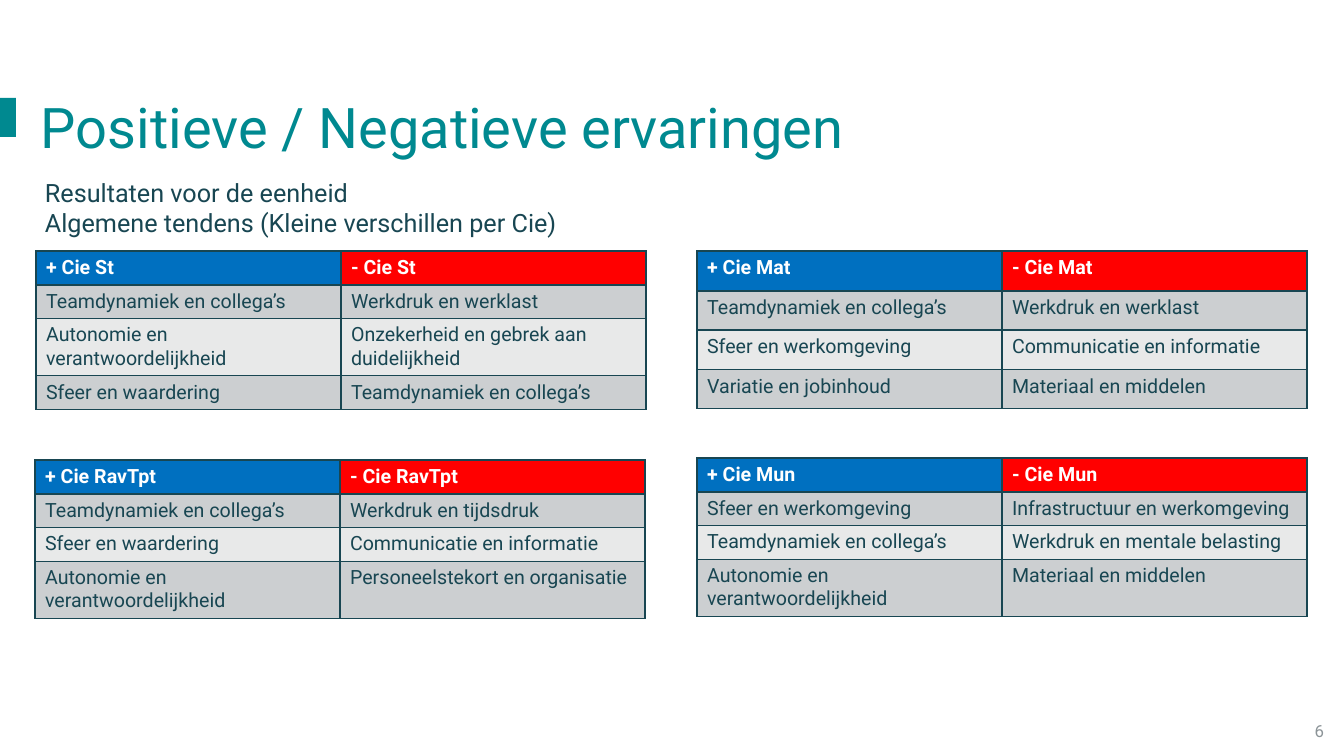
from lxml.etree import SubElement
from pptx import Presentation
from pptx.dml.color import RGBColor
from pptx.enum.shapes import MSO_SHAPE
from pptx.enum.text import MSO_ANCHOR, PP_ALIGN
from pptx.oxml import parse_xml
from pptx.oxml.ns import nsdecls
from pptx.util import Emu, Pt

COLORS = {
    "teal": "008990", "ink": "184652", "gray": "8C9498", "white": "FFFFFF",
    "plus": "0070C0", "minus": "FF0000", "band": "CCCFD1", "light": "E8E9E9",
}
FONT = "Roboto"


def px(n):
    return Emu(round(n * 914400 / 100.8))


def rgb(name):
    return RGBColor.from_string(COLORS[name])


class SlideBuilder:
    def __init__(self, prs):
        self.s = prs.slides.add_slide(prs.slide_layouts[6])

    def add_run(self, p, text, size, color, bold=False):
        r = p.add_run()
        r.text = text
        for name, value in {"name": FONT, "size": Pt(size), "bold": bold}.items():
            setattr(r.font, name, value)
        r.font.color.rgb = rgb(color)

    def bar(self, x, y, w, h, color):
        sp = self.s.shapes.add_shape(MSO_SHAPE.RECTANGLE, px(x), px(y), px(w), px(h))
        sp.shadow.inherit = False
        sp.fill.solid()
        sp.fill.fore_color.rgb = rgb(color)
        sp.line.fill.background()

    def text(self, x, y, w, h, lines, size, color, top=5,
             anchor=MSO_ANCHOR.TOP, align=PP_ALIGN.LEFT):
        tf = self.s.shapes.add_textbox(px(x), px(y), px(w), px(h)).text_frame
        frame = {"word_wrap": True, "margin_top": px(top), "vertical_anchor": anchor}
        for name, value in frame.items():
            setattr(tf, name, value)
        for i, line in enumerate(lines):
            p = tf.add_paragraph() if i else tf.paragraphs[0]
            p.alignment = align
            self.add_run(p, line, size, color)

    def border(self, cell, color):
        tc_pr = cell._tc.get_or_add_tcPr()
        for i, side in enumerate("LRTB"):
            ln = parse_xml(f'<a:ln{side} {nsdecls("a")} w="12700"><a:solidFill/></a:ln{side}>')
            SubElement(ln[0], ln[0].tag.replace("solidFill", "srgbClr"), val=COLORS[color])
            tc_pr.insert(i, ln)

    def table(self, x, y, col_w, heights, company, rows):
        rows = [(f"+ {company}", f"- {company}"), *rows]
        frame = self.s.shapes.add_table(len(rows), 2, px(x), px(y),
                                        px(2 * col_w), px(sum(heights)))
        table = frame.table
        for col in table.columns:
            col.width = px(col_w)
        for i, (row, height) in enumerate(zip(rows, heights)):
            table.rows[i].height = px(height)
            band = "band" if i % 2 else "light"
            fills = (band, band) if i else ("plus", "minus")
            for j, (text, fill) in enumerate(zip(row, fills)):
                cell = table.cell(i, j)
                cell.fill.solid()
                cell.fill.fore_color.rgb = rgb(fill)
                self.border(cell, "ink")
                self.add_run(cell.text_frame.paragraphs[0], text, 14,
                             "ink" if i else "white", bold=i == 0)


# Experiences per company: left, top, row heights, name, (positive, negative)
TEAM = "Teamdynamiek en collega’s"
AUTONOMY = "Autonomie en verantwoordelijkheid"
WORKLOAD = "Werkdruk en werklast"
SETTING = "Sfeer en werkomgeving"
APPRECIATION = "Sfeer en waardering"
COMMUNICATION = "Communicatie en informatie"
MATERIAL = "Materiaal en middelen"
TABLES = [
    (36, 251, (34, 33, 56, 34), "Cie St", [
        (TEAM, WORKLOAD),
        (AUTONOMY, "Onzekerheid en gebrek aan duidelijkheid"),
        (APPRECIATION, TEAM)]),
    (35, 460, (34, 33, 33, 57), "Cie RavTpt", [
        (TEAM, "Werkdruk en tijdsdruk"),
        (APPRECIATION, COMMUNICATION),
        (AUTONOMY, "Personeelstekort en organisatie")]),
    (697, 251, (40, 39, 40, 39), "Cie Mat", [
        (TEAM, WORKLOAD),
        (SETTING, COMMUNICATION),
        ("Variatie en jobinhoud", MATERIAL)]),
    (697, 458, (34, 33, 33, 57), "Cie Mun", [
        (SETTING, "Infrastructuur en werkomgeving"),
        (TEAM, "Werkdruk en mentale belasting"),
        (AUTONOMY, MATERIAL)]),
]


def main():
    prs = Presentation()
    prs.slide_width, prs.slide_height = px(1344), px(756)
    slide = SlideBuilder(prs)

    # Page number and accent bar
    slide.text(1032, 711, 302, 40, ["6"], 12, "gray",
               anchor=MSO_ANCHOR.MIDDLE, align=PP_ALIGN.RIGHT)
    slide.bar(0, 98, 16, 39, "teal")

    # Title and introduction
    slide.text(31, 83, 1231, 78, ["Positieve / Negatieve ervaringen"], 40, "teal", top=10)
    slide.text(35, 170, 1239, 451, ["Resultaten voor de eenheid",
               "Algemene tendens (Kleine verschillen per Cie)"], 18, "ink", top=7)

    # Tables
    for x, y, heights, company, rows in TABLES:
        slide.table(x, y, 305, heights, company, rows)

    prs.save("out.pptx")


if __name__ == "__main__":
    main()
